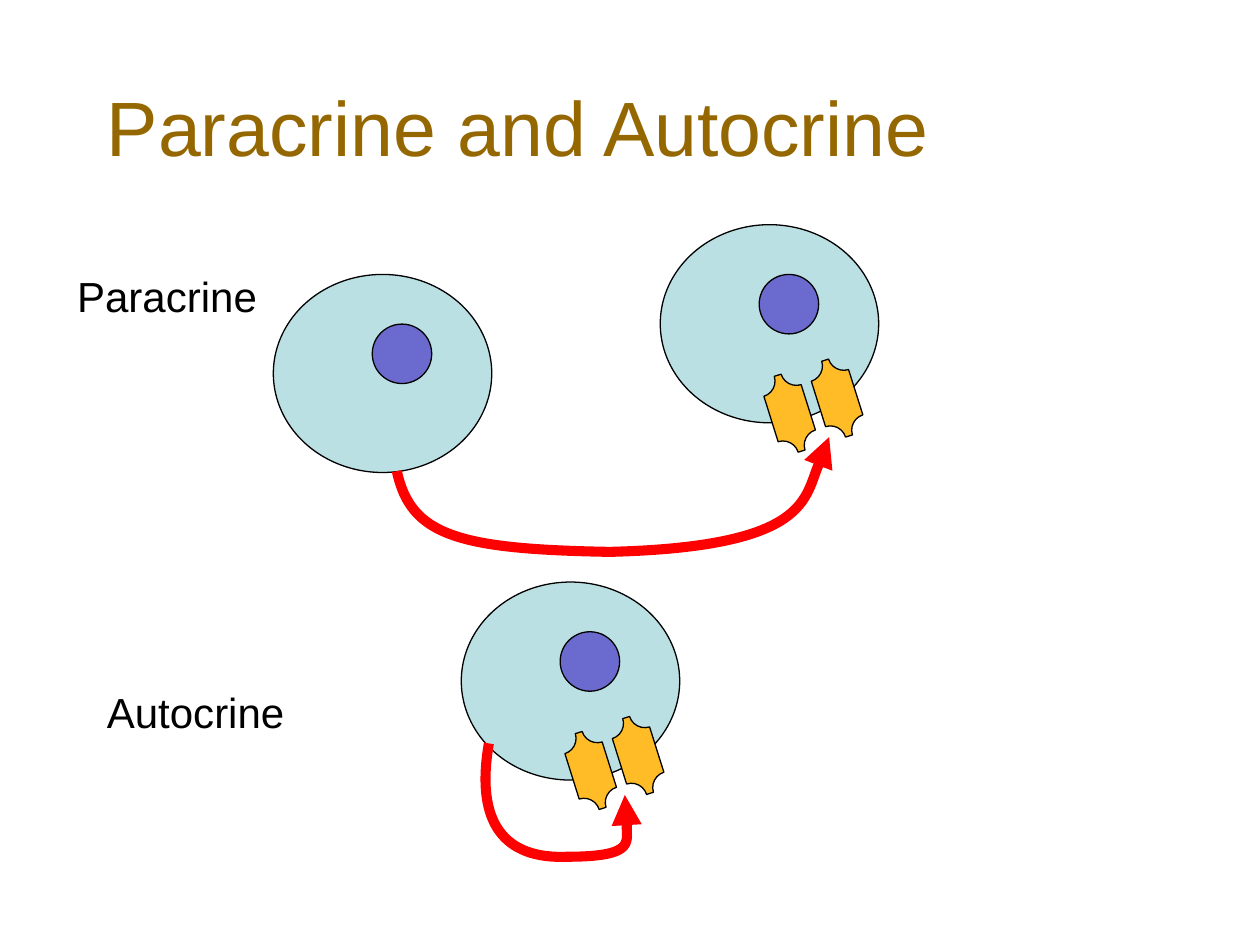
"""Build a slide that compares paracrine and autocrine cell signalling."""
import pptx
import pptx.dml.color
import pptx.enum.shapes
import pptx.enum.text
import pptx.oxml.ns
import pptx.util
from lxml import etree

Pt = pptx.util.Pt
SHAPE = pptx.enum.shapes.MSO_SHAPE
ANCHOR = pptx.enum.text.MSO_ANCHOR
COLOURS = {
    "title": "956700",
    "text": "000000",
    "outline": "000000",
    "cell": "BBE0E3",
    "nucleus": "6B6BCF",
    "receptor": "FFBC26",
    "signal": "FF0000",
}
RECEPTOR_OFFSETS = [(62.8, 85), (89.9, 76.4)]
CELLS = [(156.2, 156.8, False), (377.3, 128.4, True), (263.6, 332.6, True)]
SIGNALS = [
    [(226.8, 269.3), (234.7, 306), (261.4, 313.9), (348.5, 315.4),
     (463.7, 312.5), (468, 262.8), (473.8, 249.8)],
    [(279.4, 424.8), (271.4, 470.9), (288.7, 491), (324, 489.6),
     (365.8, 489.6), (358.6, 465.1), (357.1, 454.3)],
]


def colour(name):
    return pptx.dml.color.RGBColor.from_string(COLOURS[name])


def add_text(page, words, left, top, width, height, size, ink, anchor, wrap):
    box = page.shapes.add_textbox(Pt(left), Pt(top), Pt(width), Pt(height))
    frame = box.text_frame
    frame.word_wrap = wrap
    frame.vertical_anchor = anchor
    span = frame.paragraphs[0].add_run()
    span.text = words
    span.font.name = "Arial"
    span.font.size = Pt(size)
    span.font.color.rgb = colour(ink)


def add_part(group, kind, left, top, width, height, fill):
    part = group.shapes.add_shape(kind, Pt(left), Pt(top), Pt(width), Pt(height))
    part.shadow.inherit = False
    part.fill.solid()
    part.fill.fore_color.rgb = colour(fill)
    part.line.color.rgb = colour("outline")
    part.line.width = Pt(0.75)
    return part


def add_cell(page, left, top, has_receptors):
    group = page.shapes.add_group_shape()
    add_part(group, SHAPE.OVAL, left, top, 124.8, 113.2, "cell")
    add_part(group, SHAPE.OVAL, left + 56.5, top + 28.4, 34, 34, "nucleus")
    if has_receptors:
        for across, down in RECEPTOR_OFFSETS:
            receptor = add_part(group, SHAPE.PLAQUE, left + across, top + down,
                                22.3, 45.4, "receptor")
            receptor.adjustments[0] = 0.409
            receptor.rotation = 342.5


def bend_segments(curve):
    """Turn each three straight segments into one cubic Bézier segment."""
    qn = pptx.oxml.ns.qn
    lines = list(curve._element.iter(qn("a:lnTo")))
    for first in range(0, len(lines), 3):
        bend = etree.Element(qn("a:cubicBezTo"))
        lines[first].addprevious(bend)
        for line in lines[first:first + 3]:
            bend.append(line[0])
            line.getparent().remove(line)


def add_signal(page, points):
    vertices = [(Pt(x), Pt(y)) for x, y in points]
    builder = page.shapes.build_freeform(*vertices[0])
    builder.add_line_segments(vertices[1:], close=False)
    curve = builder.convert_to_shape()
    bend_segments(curve)
    curve.shadow.inherit = False
    curve.fill.background()
    curve.line.color.rgb = colour("signal")
    curve.line.width = Pt(5.75)
    outline = curve.line._get_or_add_ln()
    etree.SubElement(outline, pptx.oxml.ns.qn("a:tailEnd"), type="triangle")


def main():
    deck = pptx.Presentation()
    deck.slide_width, deck.slide_height = Pt(720), Pt(540)
    page = deck.slides.add_slide(deck.slide_layouts[6])
    add_text(page, "Paracrine and Autocrine", 54, 30, 612, 72, 44, "title",
             ANCHOR.BOTTOM, True)
    for left, top, has_receptors in CELLS:
        add_cell(page, left, top, has_receptors)
    for points in SIGNALS:
        add_signal(page, points)
    for words, left, top in [("Paracrine", 37, 151.2), ("Autocrine", 54, 389)]:
        add_text(page, words, left, top, 118, 36, 24, "text", ANCHOR.TOP, False)
    deck.save("out.pptx")


if __name__ == "__main__":
    main()
